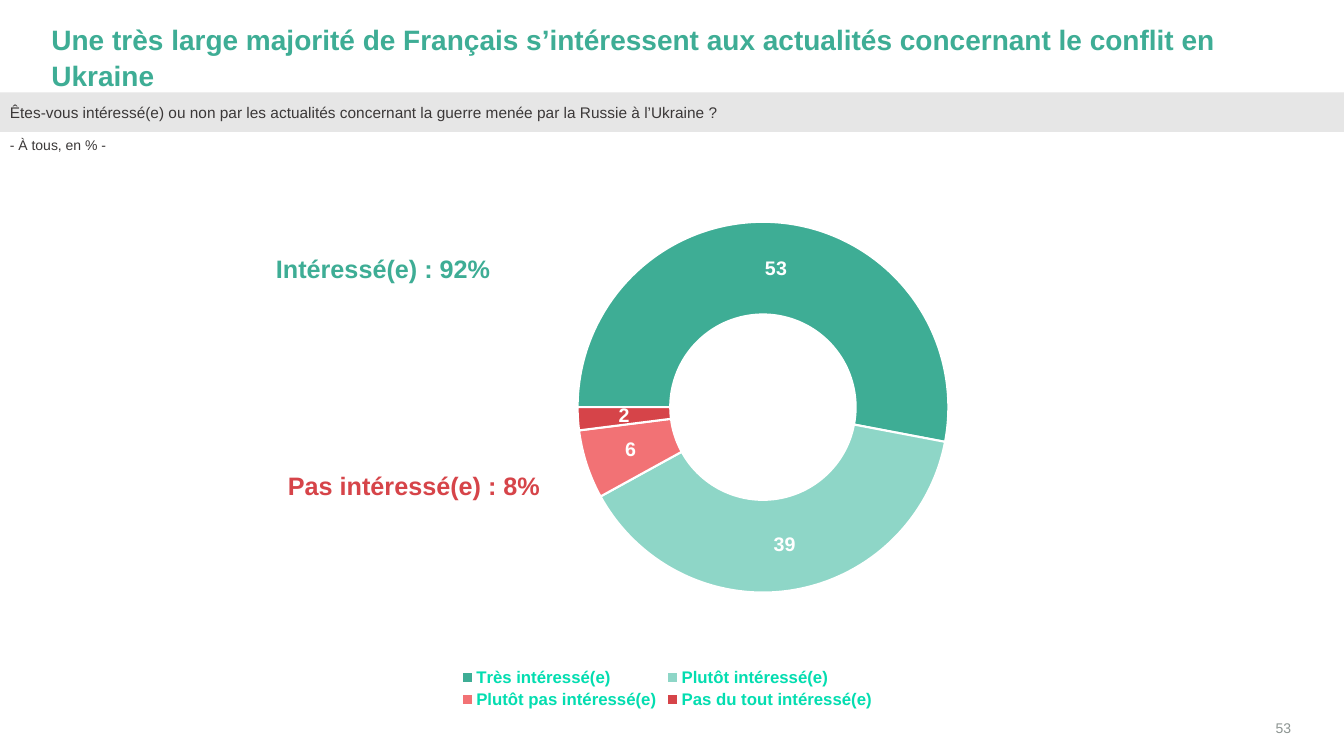
from lxml import etree
from pptx import Presentation
from pptx.chart.data import CategoryChartData
from pptx.dml.color import RGBColor
from pptx.enum import chart as ch, shapes, text
from pptx.oxml.ns import qn
from pptx.util import Pt

GREEN, MINT, CORAL, RED = "3EAD95", "8ED6C7", "F27275", "D64449"
GREY, DARK, WHITE = "E6E6E6", "3B3838", "FFFFFF"
LEFT, RIGHT = text.PP_ALIGN.LEFT, text.PP_ALIGN.RIGHT
TOP, MID, LOW = (text.MSO_ANCHOR.TOP, text.MSO_ANCHOR.MIDDLE,
                 text.MSO_ANCHOR.BOTTOM)
PAD = (7.2, 3.6, 7.2, 3.6)


def rgb(code):
    return RGBColor.from_string(code)


def style(font, size, color, bold=False):
    font.name, font.size, font.bold = "Arial", Pt(size), bold
    font.color.rgb = rgb(color)


def write(shape, words, size, color, bold=False, align=LEFT, anchor=MID,
          pad=PAD):
    frame = shape.text_frame
    frame.text = words
    frame.word_wrap = True
    frame.auto_size = text.MSO_AUTO_SIZE.NONE
    frame.vertical_anchor = anchor
    (frame.margin_left, frame.margin_top,
     frame.margin_right, frame.margin_bottom) = map(Pt, pad)
    para = frame.paragraphs[0]
    para.alignment = align
    style(para.runs[0].font, size, color, bold)
    return para


def label(slide, box, words, size, color, **kind):
    shape = slide.shapes.add_textbox(*map(Pt, box))
    return write(shape, words, size, color, **kind)


def header(slide, box):
    x, y, w, h = box
    # Title
    title = slide.shapes.title
    title.left, title.top, title.width, title.height = map(
        Pt, (x + 36.7, y + 27.4, w - 73.4, 26))
    para = write(title, "Une très large majorité de Français s’intéressent "
                 "aux actualités concernant le conflit en Ukraine",
                 20, GREEN, bold=True, pad=(0, 0, 0, 0))
    para.line_spacing = 1.05
    # Question band
    band = slide.shapes.add_shape(shapes.MSO_SHAPE.RECTANGLE,
                                  Pt(x), Pt(y + 66), Pt(w), Pt(28.3))
    band.shadow.inherit = False
    band.fill.solid()
    band.fill.fore_color.rgb = rgb(GREY)
    band.line.fill.background()
    write(band, "Êtes-vous intéressé(e) ou non par les actualités concernant "
          "la guerre menée par la Russie à l’Ukraine ?", 11, DARK,
          align=text.PP_ALIGN.JUSTIFY, pad=(7.2, 7.2, 14.4, 7.2))
    # Survey base
    label(slide, (x, y + 94.3, 156, 19.4), "- À tous, en % -", 10, DARK,
          anchor=TOP)


def place(chart, spots):
    area = chart._chartSpace.chart.plotArea
    for old in area.findall(qn("c:layout")):
        area.remove(old)
    layout = etree.Element(qn("c:layout"))
    area.insert(0, layout)
    manual = etree.SubElement(layout, qn("c:manualLayout"))
    for tag, val in spots:
        etree.SubElement(manual, qn("c:" + tag)).set("val", str(val))


def ring(slide, box):
    answers = (("Très intéressé(e)", 53, GREEN),
               ("Plutôt intéressé(e)", 39, MINT),
               ("Plutôt pas intéressé(e)", 6, CORAL),
               ("Pas du tout intéressé(e)", 2, RED))
    data = CategoryChartData()
    data.categories = [name for name, _, _ in answers]
    data.add_series("Series 1", [val for _, val, _ in answers])
    chart = slide.shapes.add_chart(ch.XL_CHART_TYPE.DOUGHNUT,
                                   *map(Pt, box), data).chart
    style(chart.font, 10, "014537")
    chart.has_title = False
    # Legend
    chart.has_legend = True
    chart.legend.position = ch.XL_LEGEND_POSITION.BOTTOM
    chart.legend.include_in_layout = False
    style(chart.legend.font, 12, "03DDB0", True)
    # Slices
    plot = chart.plots[0]
    plot.vary_by_categories = True
    series = plot.series[0]
    for i, (_, _, color) in enumerate(answers):
        part = series.points[i].format
        part.fill.solid()
        part.fill.fore_color.rgb = rgb(color)
        part.line.color.rgb = rgb(WHITE)
        part.line.width = Pt(1.5)
    # Values
    tags = series.data_labels
    tags.show_value = True
    tags.show_percentage = False
    style(tags.font, 14, WHITE, True)
    # Plot position, start angle and hole
    place(chart, (("layoutTarget", "inner"), ("xMode", "edge"),
                  ("yMode", "edge"), ("x", 0.36), ("y", 0.1),
                  ("w", 0.5), ("h", 0.68)))
    wheel = chart._chartSpace.find(".//" + qn("c:doughnutChart"))
    wheel.find(qn("c:firstSliceAng")).set("val", "270")
    wheel.find(qn("c:holeSize")).set("val", "50")


def totals(slide, box):
    x, y, w, h = box
    label(slide, (x, y, w - 36, h), "Intéressé(e) : 92%", 18, GREEN,
          bold=True)
    label(slide, (x + 8.6, y + 155.5, w - 8.6, h), "Pas intéressé(e) : 8%",
          18, RED, bold=True)


def footer(slide, box):
    label(slide, box, "53", 10, "8C9491", align=RIGHT, anchor=LOW,
          pad=(0, 0, 0, 0))


def main():
    deck = Presentation()
    deck.slide_width, deck.slide_height = Pt(960), Pt(540)
    slide = deck.slides.add_slide(deck.slide_layouts[5])
    header(slide, (0, 0, 960, 114))
    ring(slide, (165.6, 119.5, 622, 389.5))
    totals(slide, (190, 157.7, 212.4, 67.7))
    footer(slide, (879.8, 509, 42.5, 17.3))
    deck.save("out.pptx")


if __name__ == "__main__":
    main()
